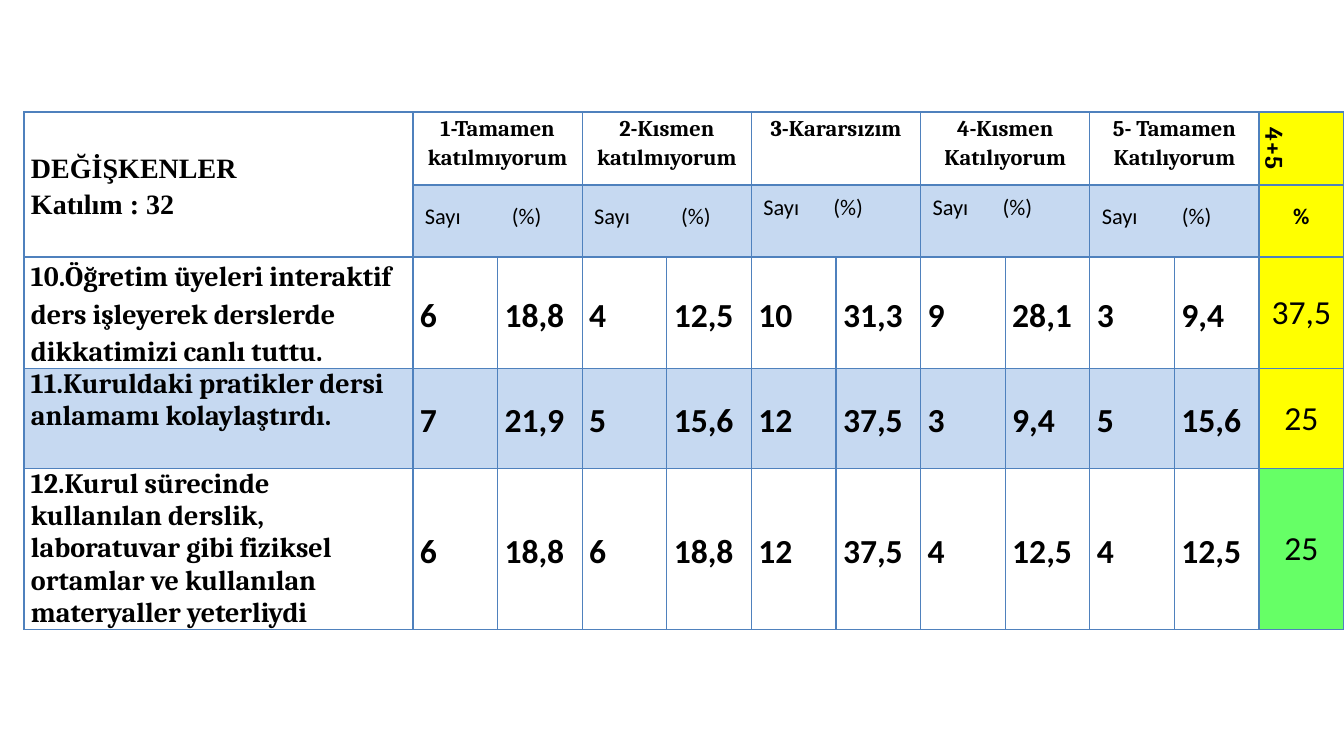
"""Build a slide with a table of survey answers."""
from lxml.etree import SubElement
from pptx import Presentation
from pptx.dml.color import RGBColor
from pptx.enum.text import MSO_ANCHOR, PP_ALIGN
from pptx.oxml.ns import qn
from pptx.util import Pt

HEADING = "DEĞİŞKENLER\nKatılım : 32"
ANSWERS = [
    ("1-Tamamen katılmıyorum", 87, 0),
    ("2-Kısmen katılmıyorum", 87, 0),
    ("3-Kararsızım", 70, 17),
    ("4-Kısmen Katılıyorum", 70, 17),
    ("5- Tamamen Katılıyorum", 80, 0),
]
COUNT_AND_SHARE = "Sayı\t(%)"
TOTAL_HEADING, TOTAL_UNIT = "4+5", "%"
QUESTIONS = [
    ("10.Öğretim üyeleri interaktif ders işleyerek derslerde dikkatimizi canlı tuttu.",
     ["6", "18,8", "4", "12,5", "10", "31,3", "9", "28,1", "3", "9,4"], "37,5"),
    ("11.Kuruldaki pratikler dersi anlamamı kolaylaştırdı.",
     ["7", "21,9", "5", "15,6", "12", "37,5", "3", "9,4", "5", "15,6"], "25"),
    ("12.Kurul sürecinde kullanılan derslik, laboratuvar gibi fiziksel ortamlar "
     "ve kullanılan materyaller yeterliydi",
     ["6", "18,8", "6", "18,8", "12", "37,5", "4", "12,5", "4", "12,5"], "25"),
]
THEME = {
    "text": "000000", "border": "4F81BD", "band": "C6D9F1",
    "yellow": "FFFF00", "green": "66FF66",
    "heading_font": "Times New Roman", "label_font": "Cambria", "value_font": "Calibri",
    "small": 16, "vertical": 18, "label": 20, "value": 24,
    "thin": 1, "thick": 2.25,
}
QUESTION_FILLS = [(None, "yellow"), ("band", "yellow"), (None, "green")]
SLIDE_WIDTH, SLIDE_HEIGHT = 1344, 756
TABLE_LEFT, TABLE_TOP, LABEL_WIDTH = 24, 112, 389
ROW_HEIGHTS = [73, 72, 111, 100, 161]
VALUE_COLUMNS = 2 * len(ANSWERS) + 1
PADDING = 7


def px(length):
    """Turn px into EMU."""
    return round(length * 914400 / 100.8)


def draw_borders(cell, row, column):
    """Outline a cell, with a thick line between the two heading rows."""
    properties = cell._tc.get_or_add_tcPr()
    thick_side = {0: "lnB", 1: "lnT"}.get(row) if column else None
    for side in ("lnL", "lnR", "lnT", "lnB"):
        width = THEME["thick" if side == thick_side else "thin"]
        line = SubElement(properties, qn(f"a:{side}"), w=str(Pt(width)))
        fill = SubElement(line, qn("a:solidFill"))
        SubElement(fill, qn("a:srgbClr"), val=THEME["border"])


def write(cell, text, font, size, bold=True, fill=None, centred=False,
          middle=True, spacing=1.15, margins=(PADDING, 0, PADDING, 0)):
    """Fill a cell and format its text."""
    if fill:
        cell.fill.solid()
        cell.fill.fore_color.rgb = RGBColor.from_string(THEME[fill])
    else:
        cell.fill.background()
    cell.vertical_anchor = MSO_ANCHOR.MIDDLE if middle else MSO_ANCHOR.TOP
    cell.margin_left, cell.margin_top, cell.margin_right, cell.margin_bottom = map(px, margins)
    cell.text_frame.text = text
    for paragraph in cell.text_frame.paragraphs:
        paragraph.alignment = PP_ALIGN.CENTER if centred else PP_ALIGN.LEFT
        paragraph.line_spacing = spacing
        for run in paragraph.runs:
            run.font.name = THEME[font]
            run.font.size = Pt(THEME[size])
            run.font.bold = bold
            run.font.color.rgb = RGBColor.from_string(THEME["text"])


def add_tab_stop(cell, position):
    """Give the cell's paragraph one left tab stop."""
    properties = cell.text_frame.paragraphs[0]._p.get_or_add_pPr()
    stops = SubElement(properties, qn("a:tabLst"))
    SubElement(stops, qn("a:tab"), pos=str(px(position)), algn="l")


def write_headings(table):
    """Write the two heading rows."""
    table.cell(0, 0).merge(table.cell(1, 0))
    write(table.cell(0, 0), HEADING, "heading_font", "label")
    for index, (answer, tab_position, bottom) in enumerate(ANSWERS):
        column = 1 + 2 * index
        for row in (0, 1):
            table.cell(row, column).merge(table.cell(row, column + 1))
        write(table.cell(0, column), answer, "label_font", "small", centred=True, middle=False)
        unit_cell = table.cell(1, column)
        write(unit_cell, COUNT_AND_SHARE, "value_font", "small", bold=False, fill="band",
              spacing=Pt(13), margins=(PADDING + 5, 0, PADDING, bottom))
        add_tab_stop(unit_cell, tab_position)
    total_cell = table.cell(0, VALUE_COLUMNS)
    write(total_cell, TOTAL_HEADING, "label_font", "vertical", fill="yellow",
          centred=True, middle=False)
    total_cell._tc.get_or_add_tcPr().set("vert", "vert")
    write(table.cell(1, VALUE_COLUMNS), TOTAL_UNIT, "value_font", "small", fill="yellow",
          centred=True, spacing=Pt(13))


def write_questions(table):
    """Write one row for each question."""
    rows = zip(QUESTIONS, QUESTION_FILLS)
    for row, ((question, values, total), (fill, total_fill)) in enumerate(rows, start=2):
        write(table.cell(row, 0), question, "label_font", "label", fill=fill,
              middle=False, spacing=1.15 if row == 2 else 1.0)
        for column, value in enumerate(values, start=1):
            write(table.cell(row, column), value, "value_font", "value", fill=fill)
        write(table.cell(row, VALUE_COLUMNS), total, "value_font", "value", bold=False,
              fill=total_fill, centred=True, spacing=1.0, margins=(1, 1, 1, 0))


def main():
    """Create the presentation and save it."""
    presentation = Presentation()
    presentation.slide_width, presentation.slide_height = px(SLIDE_WIDTH), px(SLIDE_HEIGHT)
    slide = presentation.slides.add_slide(presentation.slide_layouts[6])
    table_width = SLIDE_WIDTH - TABLE_LEFT
    table = slide.shapes.add_table(
        len(ROW_HEIGHTS), VALUE_COLUMNS + 1, px(TABLE_LEFT), px(TABLE_TOP),
        px(table_width), px(sum(ROW_HEIGHTS))).table
    table.first_row = table.horz_banding = False
    value_width = (table_width - LABEL_WIDTH) / VALUE_COLUMNS
    for index, column in enumerate(table.columns):
        column.width = px(value_width if index else LABEL_WIDTH)
    for row, height in zip(table.rows, ROW_HEIGHTS):
        row.height = px(height)
    for row_index, row in enumerate(table.rows):
        for column_index, cell in enumerate(row.cells):
            draw_borders(cell, row_index, column_index)
    write_headings(table)
    write_questions(table)
    presentation.save("out.pptx")


if __name__ == "__main__":
    main()
